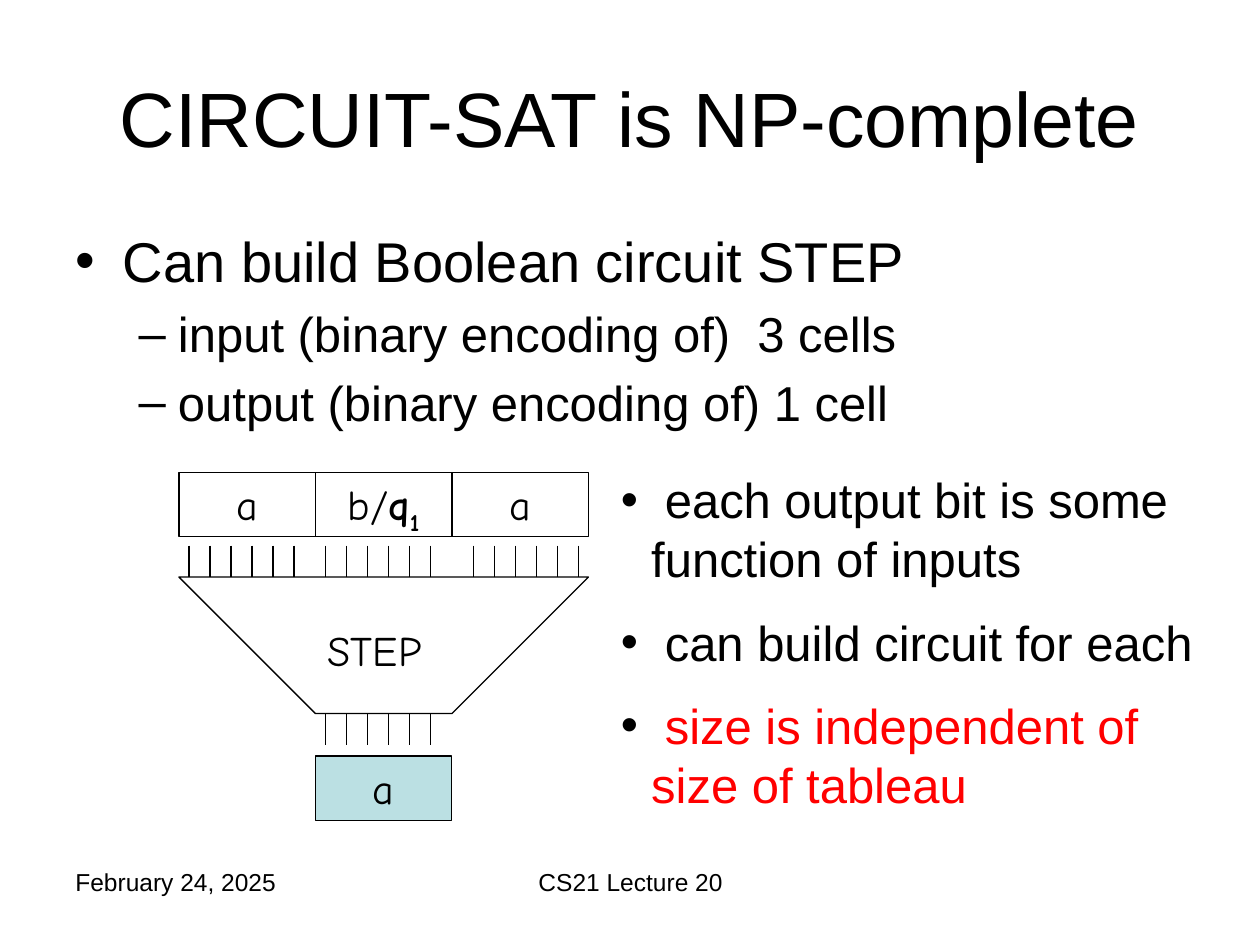
from lxml.etree import SubElement
from pptx import Presentation
from pptx.dml.color import RGBColor
from pptx.enum.shapes import MSO_CONNECTOR, MSO_SHAPE
from pptx.enum.text import MSO_ANCHOR, PP_ALIGN
from pptx.oxml.ns import qn
from pptx.util import Inches, Pt

BLACK = "000000"
CELL_W, CELL_H = 13 / 12, 0.51
WIRE_GAP, WIRE_H = 1 / 6, 0.25
BODY = {"name": "Arial", "size": Pt(28)}
SMALL = {"name": "Arial", "size": Pt(14)}
HAND = {"name": "Comic Neue", "size": Pt(24)}


def rgb(color):
    """Turn a hex string into a colour."""
    return RGBColor.from_string(color)


def add_run(p, text, fmt, color=BLACK):
    """Add a run with the given font values."""
    r = p.add_run()
    r.text = text
    for name, value in fmt.items():
        setattr(r.font, name, value)
    r.font.color.rgb = rgb(color)
    return r


def space_before(p, percent):
    """Set the space before a paragraph as a share of its text size."""
    spc = SubElement(p._p.get_or_add_pPr(), qn("a:spcBef"))
    SubElement(spc, qn("a:spcPct")).set("val", str(percent * 1000))


def add_bullet(p, indent):
    """Give a paragraph a round bullet with a hanging indent."""
    pPr = p._p.get_or_add_pPr()
    pPr.set("marL", str(Inches(indent)))
    pPr.set("indent", str(-Inches(indent)))
    SubElement(pPr, qn("a:buFont")).set("typeface", "Arial")
    SubElement(pPr, qn("a:buChar")).set("char", "•")


def style_outline(sp, fill=None):
    """Give a shape a thin black outline and a fill or none."""
    sp.shadow.inherit = False
    sp.line.color.rgb = rgb(BLACK)
    sp.line.width = Pt(0.75)
    if fill:
        sp.fill.solid()
        sp.fill.fore_color.rgb = rgb(fill)
    else:
        sp.fill.background()


def add_text(s, left, top, width, height):
    """Add a wrapping text box and return its text frame."""
    tf = s.shapes.add_textbox(*map(Inches, (left, top, width, height))).text_frame
    tf.word_wrap = True
    return tf


def add_cell(s, left, top, runs, fill=None):
    """Add a tableau cell with centred text."""
    sp = s.shapes.add_shape(MSO_SHAPE.RECTANGLE,
                            *map(Inches, (left, top, CELL_W, CELL_H)))
    style_outline(sp, fill)
    sp.text_frame.vertical_anchor = MSO_ANCHOR.TOP
    p = sp.text_frame.paragraphs[0]
    p.alignment = PP_ALIGN.CENTER
    space_before(p, 50)
    for text, fmt, baseline in runs:
        r = add_run(p, text, HAND | fmt)
        if baseline:
            r._r.get_or_add_rPr().set("baseline", str(baseline * 1000))


def add_wires(s, left, top):
    """Add six evenly spaced vertical wires."""
    for i in range(6):
        x = Inches(left + i * WIRE_GAP)
        wire = s.shapes.add_connector(MSO_CONNECTOR.STRAIGHT, x, Inches(top),
                                      x, Inches(top + WIRE_H))
        wire.line.color.rgb = rgb(BLACK)
        wire.line.width = Pt(0.75)
        SubElement(wire._element.spPr, qn("a:effectLst"))


def add_funnel(s, left, top):
    """Add the STEP circuit, three cells wide above and one below."""
    corners = [(0, 0), (1, 1), (2, 1), (3, 0)]
    points = [(Inches(left + x * CELL_W), Inches(top + y * CELL_W))
              for x, y in corners]
    builder = s.shapes.build_freeform(*points[0])
    builder.add_line_segments(points[1:], close=True)
    style_outline(builder.convert_to_shape())
    p = add_text(s, left + CELL_W, top + 0.33, 1.33, 0.5).paragraphs[0]
    space_before(p, 50)
    add_run(p, "STEP", HAND)


def add_circuit(s, left, top):
    """Add the input cells, wires, STEP circuit and output cell."""
    plain = [("a", {}, 0)]
    state = [("b/", {}, 0), ("q", {"bold": True}, 0), ("1", {"bold": True}, -25)]
    for i, (runs, inset) in enumerate([(plain, 0.08), (state, 0.08), (plain, 0.17)]):
        x = left + i * CELL_W
        add_cell(s, x, top, runs)
        add_wires(s, x + inset, top + 0.58)
    add_funnel(s, left, top + 0.83)
    middle = left + CELL_W
    add_wires(s, middle + 0.08, top + 0.83 + CELL_W)
    add_cell(s, middle, top + 2.25, plain, "BBE0E3")


def add_remarks(s, left, top, width, height):
    """Add the bulleted remarks beside the circuit."""
    tf = add_text(s, left, top, width, height)
    remarks = [("each output bit is some function of inputs", BLACK),
               ("can build circuit for each", BLACK),
               ("size is independent of size of tableau", "FF0000")]
    for i, (text, color) in enumerate(remarks):
        p = tf.add_paragraph() if i else tf.paragraphs[0]
        space_before(p, 50)
        add_bullet(p, 0.24)
        add_run(p, " ", BODY)
        add_run(p, text, BODY, color)


def place(sp, left, top, width, height):
    """Move and size a placeholder."""
    sp.left, sp.top, sp.width, sp.height = map(Inches, (left, top, width, height))


def fill_title(s, *box):
    """Place and fill the title."""
    place(s.shapes.title, *box)
    tf = s.shapes.title.text_frame
    tf.vertical_anchor = MSO_ANCHOR.MIDDLE
    p = tf.paragraphs[0]
    p.alignment = PP_ALIGN.CENTER
    add_run(p, "CIRCUIT-SAT is NP-complete", BODY | {"size": Pt(44)})


def fill_body(s, *box):
    """Place and fill the main list."""
    body = s.placeholders[1]
    place(body, *box)
    tf = body.text_frame
    items = [("Can build Boolean circuit STEP", 0, 32),
             ("input (binary encoding of)  3 cells", 1, 28),
             ("output (binary encoding of) 1 cell", 1, 28)]
    for i, (text, level, size) in enumerate(items):
        p = tf.add_paragraph() if i else tf.paragraphs[0]
        p.level = level
        add_run(p, text, BODY | {"size": Pt(size)})


def add_footer(s, top, height):
    """Add the date and the lecture name."""
    for text, left, width, align in [
            ("February 24, 2025", 0.5, 2.33, PP_ALIGN.LEFT),
            ("CS21 Lecture 20", 3.42, 3.17, PP_ALIGN.CENTER)]:
        p = add_text(s, left, top, width, height).paragraphs[0]
        p.alignment = align
        add_run(p, text, SMALL)


def main():
    """Build the slide and save it."""
    prs = Presentation()
    prs.slide_width, prs.slide_height = Inches(10), Inches(7.5)
    s = prs.slides.add_slide(prs.slide_layouts[1])
    fill_title(s, 0.5, 0.3, 9, 1.25)
    fill_body(s, 0.5, 1.75, 9, 4.95)
    add_circuit(s, 1.42, 3.75)
    add_remarks(s, 4.83, 3.68, 4.92, 2.9)
    add_footer(s, 6.83, 0.52)
    prs.save("out.pptx")


if __name__ == "__main__":
    main()
